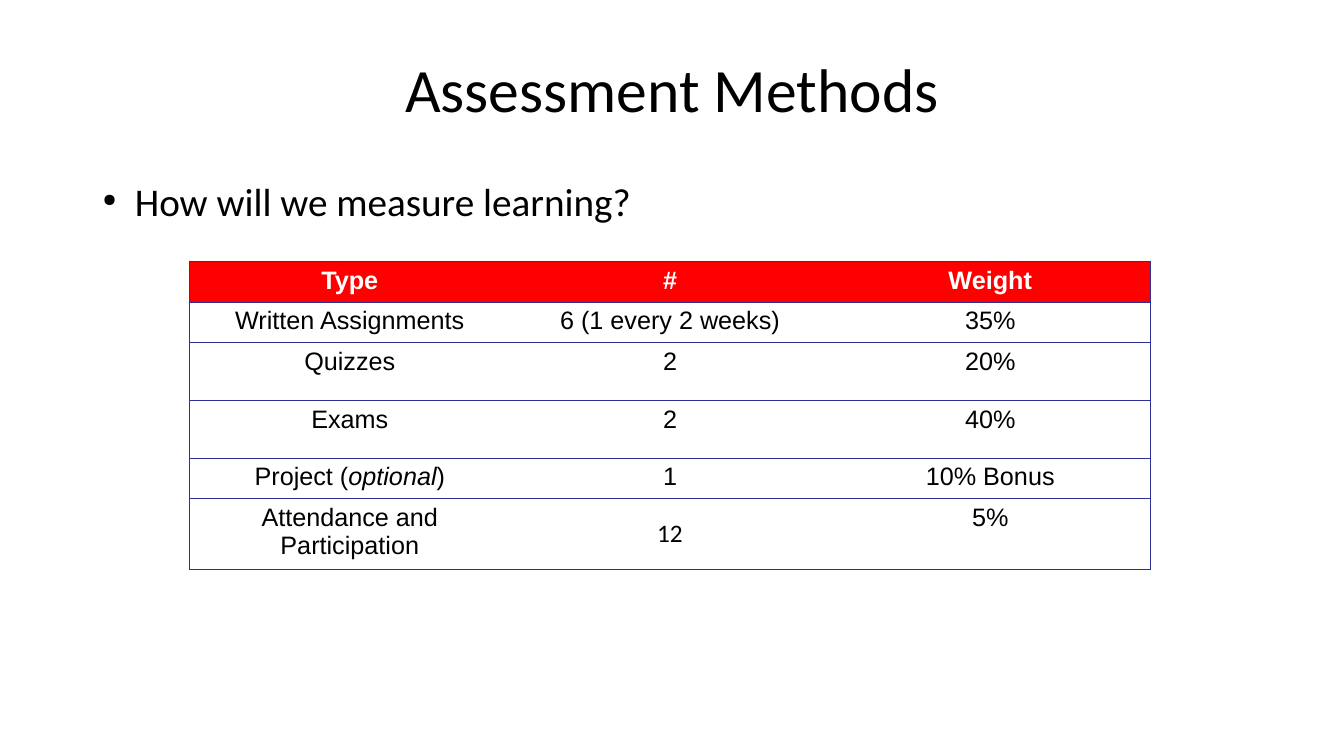
"""Build the Assessment Methods slide with its grading table."""
from dataclasses import dataclass

from lxml import etree
from pptx import Presentation
from pptx.dml.color import RGBColor
from pptx.enum.text import MSO_ANCHOR, PP_ALIGN
from pptx.oxml.ns import qn
from pptx.util import Cm, Pt

CENTER, LEFT = PP_ALIGN.CENTER, PP_ALIGN.LEFT
TOP, MIDDLE = MSO_ANCHOR.TOP, MSO_ANCHOR.MIDDLE
COLORS = {"text": "000000", "header": "FF0000", "header_text": "FFFFFF", "border": "2F2F98"}
COLUMN_WIDTH = 8.07


@dataclass
class TextLine:
    text: str
    left: float
    top: float
    width: float
    height: float
    size: int
    alignment: PP_ALIGN
    anchor: MSO_ANCHOR
    bullet: str = ""


@dataclass
class TableRow:
    cells: tuple[str, str, str]
    height: float
    header: bool = False
    italic: str = ""
    count_font: str = "Arial"
    count_anchor: MSO_ANCHOR = TOP


TEXT_LINES = [
    TextLine("Assessment Methods", 5.51, 0.86, 22.86, 2.95, 44, CENTER, MIDDLE),
    TextLine("How will we measure learning?", 2.06, 4.47, 26.37, 12.57, 28, LEFT, TOP, "●"),
]
TABLE_ROWS = [
    TableRow(("Type", "#", "Weight"), 1.03, header=True),
    TableRow(("Written Assignments", "6 (1 every 2 weeks)", "35%"), 1.03),
    TableRow(("Quizzes", "2", "20%"), 1.45),
    TableRow(("Exams", "2", "40%"), 1.45),
    TableRow(("Project (optional)", "1", "10% Bonus"), 1.03, italic="optional"),
    TableRow(("Attendance and Participation", "12", "5%"), 1.45,
             count_font="Calibri", count_anchor=MIDDLE),
]


def format_runs(paragraph, font_name: str, size: int, color: str, bold: bool = False) -> None:
    for run in paragraph.runs:
        run.font.name = font_name
        run.font.size = Pt(size)
        run.font.bold = bold
        run.font.color.rgb = RGBColor.from_string(COLORS[color])


def add_bullet(paragraph, character: str) -> None:
    paragraph.space_before = Pt(10)
    properties = paragraph._p.get_or_add_pPr()
    properties.set("marL", str(Cm(1.09)))
    properties.set("indent", str(Cm(-0.81)))
    etree.SubElement(properties, qn("a:buSzPct"), val="45000")
    etree.SubElement(properties, qn("a:buChar"), char=character)


def add_text_line(slide, line: TextLine) -> None:
    shape = slide.shapes.add_textbox(Cm(line.left), Cm(line.top), Cm(line.width), Cm(line.height))
    text_frame = shape.text_frame
    text_frame.word_wrap = True
    text_frame.vertical_anchor = line.anchor
    text_frame.text = line.text
    paragraph = text_frame.paragraphs[0]
    paragraph.alignment = line.alignment
    paragraph.line_spacing = 0.9
    format_runs(paragraph, "Calibri", line.size, "text")
    if line.bullet:
        add_bullet(paragraph, line.bullet)


def set_borders(cell, column: int) -> None:
    visible = {"lnL": column == 0, "lnR": column == 2, "lnT": True, "lnB": True}
    properties = cell._tc.get_or_add_tcPr()
    for position, (side, shown) in enumerate(visible.items()):
        border = etree.Element(qn(f"a:{side}"), w=str(Pt(0.75)))
        if shown:
            fill = etree.SubElement(border, qn("a:solidFill"))
            etree.SubElement(fill, qn("a:srgbClr"), val=COLORS["border"])
        else:
            etree.SubElement(border, qn("a:noFill"))
        properties.insert(position, border)


def fill_cell(cell, row: TableRow, column: int) -> None:
    text = row.cells[column]
    paragraph = cell.text_frame.paragraphs[0]
    if row.italic and row.italic in text:
        before, after = text.split(row.italic)
        for part in (before, row.italic, after):
            run = paragraph.add_run()
            run.text = part
            run.font.italic = part == row.italic
    else:
        paragraph.text = text
    paragraph.alignment = CENTER
    is_count = column == 1
    cell.vertical_anchor = row.count_anchor if is_count else TOP
    font_name = row.count_font if is_count else "Arial"
    format_runs(paragraph, font_name, 18, "header_text" if row.header else "text", row.header)
    if row.header:
        cell.fill.solid()
        cell.fill.fore_color.rgb = RGBColor.from_string(COLORS["header"])
    else:
        cell.fill.background()
    set_borders(cell, column)


def add_assessment_table(slide, rows: list[TableRow]) -> None:
    height = sum(row.height for row in rows)
    table = slide.shapes.add_table(
        len(rows), 3, Cm(4.78), Cm(6.58), Cm(3 * COLUMN_WIDTH), Cm(height)).table
    table.first_row = False
    table.horz_banding = False
    for table_column in table.columns:
        table_column.width = Cm(COLUMN_WIDTH)
    for index, row in enumerate(rows):
        table.rows[index].height = Cm(row.height)
        for column in range(3):
            fill_cell(table.cell(index, column), row, column)


def main() -> None:
    presentation = Presentation()
    presentation.slide_width = Cm(33.87)
    presentation.slide_height = Cm(19.05)
    slide = presentation.slides.add_slide(presentation.slide_layouts[6])
    for line in TEXT_LINES:
        add_text_line(slide, line)
    add_assessment_table(slide, TABLE_ROWS)
    presentation.save("out.pptx")


if __name__ == "__main__":
    main()
